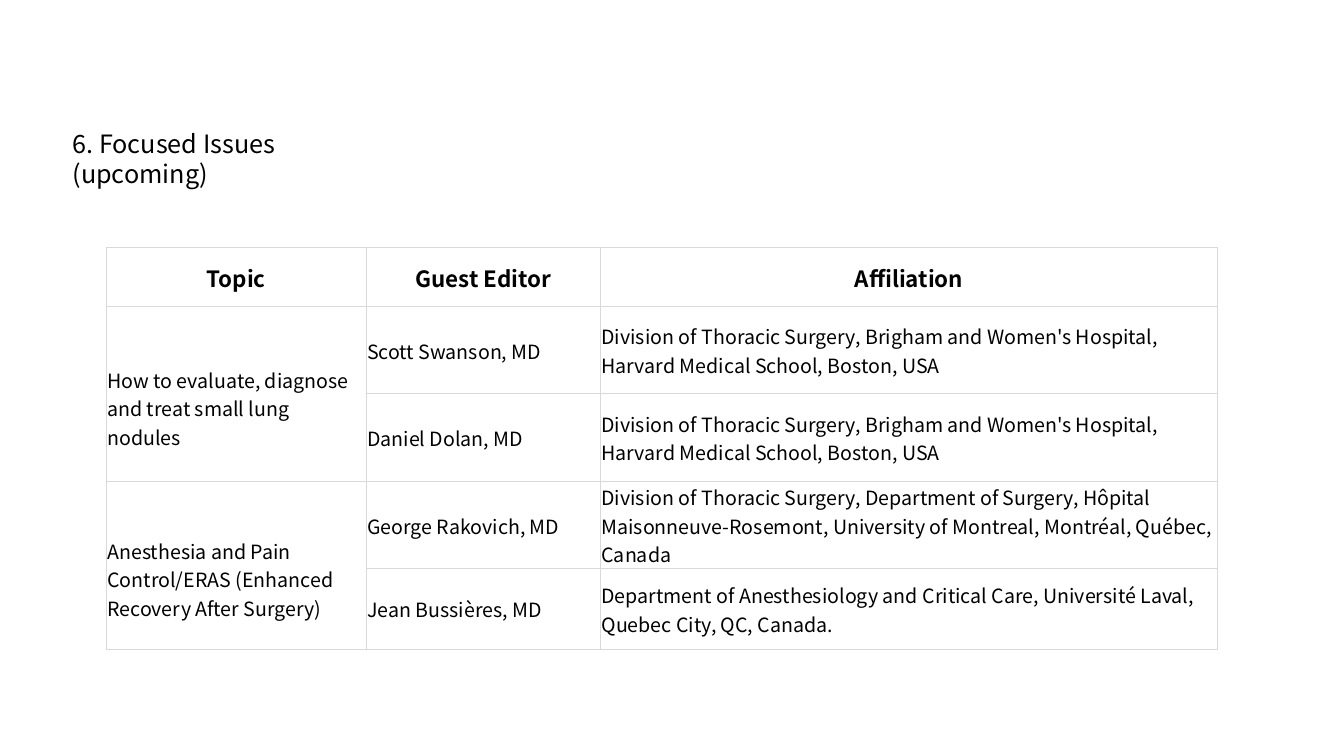
from lxml.etree import SubElement
from pptx import Presentation
from pptx.dml.color import RGBColor
from pptx.enum.text import MSO_ANCHOR as ANCHOR, PP_ALIGN as ALIGN
from pptx.oxml import parse_xml
from pptx.oxml.ns import qn
from pptx.util import Pt

BLACK = RGBColor(0, 0, 0)
BORDER = RGBColor(0xD9, 0xD9, 0xD9)
FONT = "Noto Sans CJK SC"
A_NS = "http://schemas.openxmlformats.org/drawingml/2006/main"

TITLE_BOX = (44.64, 87.84, 257.76, 54)
TABLE_BOX = (75.9, 176.6, 794, 287)
COL_WIDTHS = (185.6, 167.4, 441)
ROW_HEIGHTS = (42.5, 62, 63, 62, 57.5)
TOPIC_DROP = 20

HEADERS = ("Topic", "Guest Editor", "Affiliation")
BRIGHAM = ("Division of Thoracic Surgery, Brigham and Women's Hospital, "
           "Harvard Medical School, Boston, USA")
ISSUES = (
    ("How to evaluate, diagnose and treat small lung nodules", (
        ("Scott Swanson, MD", BRIGHAM),
        ("Daniel Dolan, MD", BRIGHAM),
    )),
    ("Anesthesia and Pain Control/ERAS (Enhanced Recovery After Surgery)", (
        ("George Rakovich, MD",
         "Division of Thoracic Surgery, Department of Surgery, Hôpital "
         "Maisonneuve-Rosemont, University of Montreal, Montréal, Québec, Canada"),
        ("Jean Bussières, MD",
         "Department of Anesthesiology and Critical Care, Université Laval, "
         "Quebec City, QC, Canada."),
    )),
)


def set_attrs(obj, values):
    """Set every named attribute of an object."""
    for name, value in values.items():
        setattr(obj, name, value)


def write(tf, text, size, bold=False, align=ALIGN.LEFT):
    """Write one formatted paragraph into a text frame."""
    p = tf.paragraphs[0]
    p.alignment = align
    r = p.add_run()
    r.text = text
    set_attrs(r.font, {"name": FONT, "size": Pt(size), "bold": bold})
    r.font.color.rgb = BLACK
    SubElement(r.font._element, qn("a:ea"), typeface=FONT)
    return p


def add_title(s, box, text):
    """Place the slide title in its box."""
    sp = s.shapes.title
    set_attrs(sp, dict(zip(("left", "top", "width", "height"), map(Pt, box))))
    tf = sp.text_frame
    set_attrs(tf, {"word_wrap": True, "vertical_anchor": ANCHOR.TOP})
    write(tf, text, 18).line_spacing = Pt(21.5)


def style_cell(cell):
    """Give a cell thin grey borders, no fill and tight margins."""
    set_attrs(cell, {"margin_left": Pt(0.75), "margin_right": Pt(0.75),
                     "margin_top": Pt(0.75), "margin_bottom": 0,
                     "vertical_anchor": ANCHOR.MIDDLE})
    cell.fill.background()
    tc_pr = cell._tc.get_or_add_tcPr()
    for i, side in enumerate("LRTB"):
        tc_pr.insert(i, parse_xml(
            f'<a:ln{side} xmlns:a="{A_NS}" w="{Pt(0.5)}"><a:solidFill>'
            f'<a:srgbClr val="{BORDER}"/></a:solidFill></a:ln{side}>'))


def add_issue_table(s, box, headers, issues):
    """Place the table of issues, with each topic spanning its editors."""
    n_rows = 1 + sum(len(editors) for _, editors in issues)
    table = s.shapes.add_table(n_rows, len(headers), *map(Pt, box)).table
    set_attrs(table, {"first_row": False, "horz_banding": False})
    for col, width in zip(table.columns, COL_WIDTHS):
        col.width = Pt(width)
    for row, height in zip(table.rows, ROW_HEIGHTS):
        row.height = Pt(height)
    for cell in table.iter_cells():
        style_cell(cell)
    for c, header in enumerate(headers):
        write(table.cell(0, c).text_frame, header, 16, True, ALIGN.CENTER)
    first = 1
    for topic, editors in issues:
        cell = table.cell(first, 0)
        cell.merge(table.cell(first + len(editors) - 1, 0))
        cell.margin_top = Pt(TOPIC_DROP)
        write(cell.text_frame, topic, 14)
        for r, values in enumerate(editors, first):
            for c, text in enumerate(values, 1):
                write(table.cell(r, c).text_frame, text, 14)
        first += len(editors)


def main():
    """Build and save the slide."""
    prs = Presentation()
    set_attrs(prs, {"slide_width": Pt(960), "slide_height": Pt(540)})
    s = prs.slides.add_slide(prs.slide_layouts[5])
    add_title(s, TITLE_BOX, "6. Focused Issues (upcoming)")
    add_issue_table(s, TABLE_BOX, HEADERS, ISSUES)
    prs.save("out.pptx")


if __name__ == "__main__":
    main()
